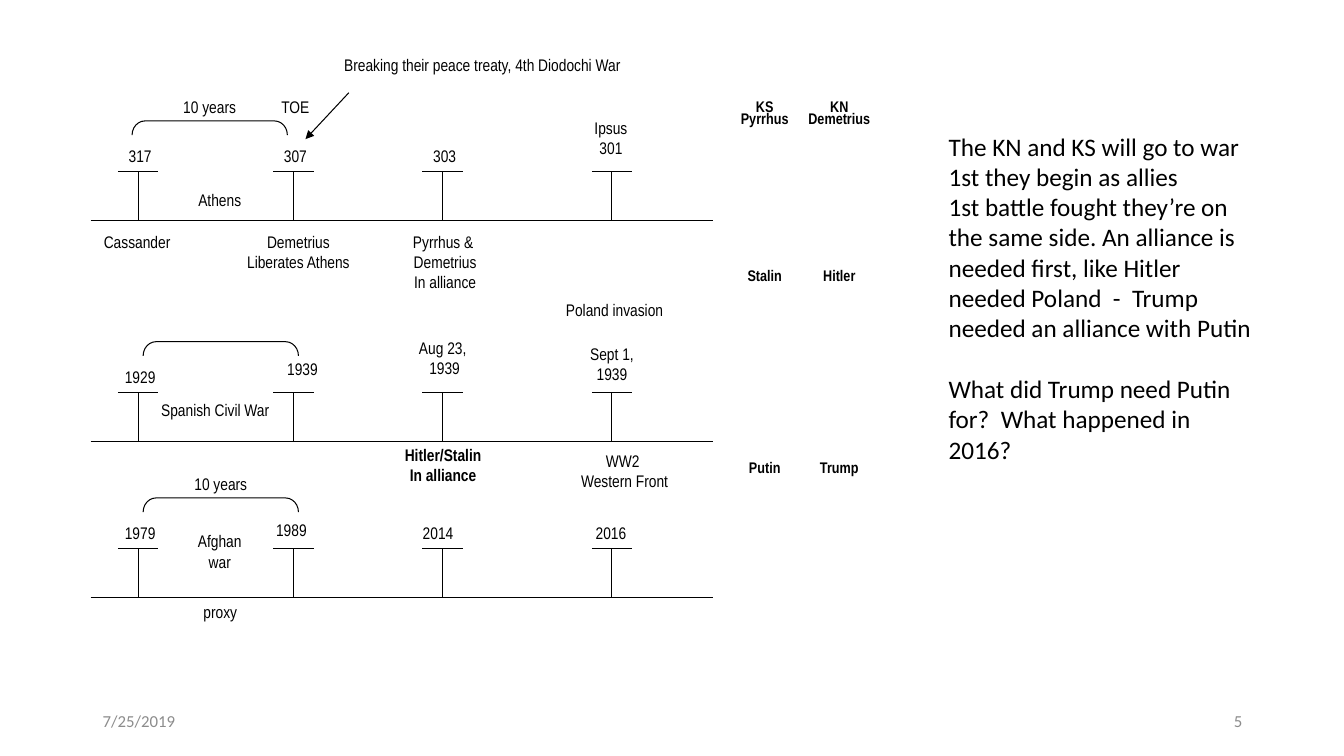
from lxml import etree
from pptx import Presentation
from pptx.dml.color import RGBColor
from pptx.enum import shapes, text
from pptx.oxml.ns import qn
from pptx.util import Inches, Pt

BLACK, GREY = "000000", "8C8C8C"
NARROW, PLAIN = "Arial Narrow", "Calibri"
LEFT, CENTER, RIGHT = text.PP_ALIGN.LEFT, text.PP_ALIGN.CENTER, text.PP_ALIGN.RIGHT

# Timelines: heights of the base lines, marks along each, (left, top) of brackets
BASES = [2.19, 4.38, 5.93]
LINE_START, LINE_END = 0.9, 7.07
MARKS = [1.37, 2.91, 4.39, 6.07]
STEM, HALF_TICK = 0.49, 0.2
BRACKETS = [(2.01, 0.5), (2.12, 2.69), (2.12, 4.24)]
ARROW = (3.46, 0.92, 3.03, 1.38)

# Labels: left, top, width, height, lines
LABELS = [
    (3.03, 0.5, 3.51, 0.32, ["Breaking their peace treaty, 4th Diodochi War"]),
    (1.71, 0.92, 0.74, 0.32, ["10 years"]),
    (2.71, 0.92, 0.44, 0.32, ["TOE"]),
    (1.17, 1.41, 0.44, 0.32, ["317"]),
    (2.71, 1.41, 0.44, 0.32, ["307"]),
    (4.19, 1.41, 0.44, 0.32, ["303"]),
    (5.66, 1.13, 0.8, 0.6, ["Ipsus", "301"]),
    (1.71, 1.84, 0.94, 0.32, ["Athens"]),
    (0.9, 2.26, 0.92, 0.32, ["Cassander"]),
    (2.32, 2.26, 1.28, 0.56, ["Demetrius", "Liberates Athens"]),
    (3.88, 2.26, 1.07, 0.78, ["Pyrrhus & ", "Demetrius", "In alliance"]),
    (5.57, 2.93, 1.05, 0.36, ["Poland invasion"]),
    (1.17, 3.6, 0.44, 0.32, ["1929"]),
    (2.68, 3.52, 0.64, 0.33, ["1939"]),
    (4.03, 3.31, 0.76, 0.61, ["Aug 23, ", "1939"]),
    (5.67, 3.37, 0.8, 0.55, ["Sept 1, 1939"]),
    (1.52, 3.93, 1.23, 0.38, ["Spanish Civil War"]),
    (5.67, 4.43, 1.05, 0.5, ["WW2 ", "Western Front"]),
    (1.82, 4.66, 0.74, 0.32, ["10 years"]),
    (1.17, 5.15, 0.44, 0.32, ["1979"]),
    (2.57, 5.12, 0.64, 0.29, ["1989"]),
    (4.06, 5.15, 0.57, 0.32, ["2014"]),
    (5.66, 5.15, 0.8, 0.32, ["2016"]),
    (1.71, 5.23, 0.94, 0.67, ["Afghan", "war"]),
    (1.65, 5.93, 1.07, 0.39, ["proxy"]),
]
ALLIANCE = (3.86, 4.37, 1.07, 0.5, ["Hitler/Stalin", "In alliance"])

KINGS = [
    (["KS", "Pyrrhus"], ["KN", "Demetrius"]),
    (["Stalin"], ["Hitler"]),
    (["Putin"], ["Trump"]),
]
KING_WIDTHS, KING_HEIGHTS = [0.67, 0.81], [1.68, 1.9, 1.18]

COMMENTARY = [
    "The KN and KS will go to war",
    "1st they begin as allies",
    "1st battle fought they’re on the same side. An alliance is needed first, "
    "like Hitler needed Poland  -  Trump needed an alliance with Putin",
    "What did Trump need Putin for?  What happened in 2016?",
]


def color(value):
    return RGBColor.from_string(value)


def write(frame, lines, size=12, font=NARROW, tint=BLACK, bold=False, align=CENTER):
    frame.text = "\n".join(lines)
    for para in frame.paragraphs:
        para.alignment = align
        for span in para.runs:
            span.font.size = Pt(size)
            span.font.name = font
            span.font.bold = bold
            span.font.color.rgb = color(tint)


def add_text(page, left, top, width, height, lines, inset=0.04, **style):
    box = page.shapes.add_textbox(*map(Inches, (left, top, width, height)))
    frame = box.text_frame
    frame.word_wrap = True
    frame.margin_left = frame.margin_right = Inches(inset)
    frame.margin_top = frame.margin_bottom = Inches(min(inset, 0.05))
    write(frame, lines, **style)
    return frame


def add_line(page, *ends):
    line = page.shapes.add_connector(shapes.MSO_CONNECTOR.STRAIGHT, *map(Inches, ends))
    line.line.color.rgb = color(BLACK)
    line.line.width = Pt(0.75)
    etree.SubElement(line._element.spPr, qn("a:effectLst"))
    return line


def add_timelines(page):
    for base in BASES:
        add_line(page, LINE_START, base, LINE_END, base)
        top = base - STEM
        for mark in MARKS:
            add_line(page, mark, top, mark, base)
            add_line(page, mark - HALF_TICK, top, mark + HALF_TICK, top)
    for left, top in BRACKETS:
        bracket = page.shapes.add_shape(shapes.MSO_SHAPE.LEFT_BRACKET,
                                        *map(Inches, (left, top, 0.14, 1.54)))
        bracket.rotation = 90
        bracket.adjustments[0] = 0.911
        bracket.shadow.inherit = False
        bracket.fill.background()
        bracket.line.color.rgb = color(BLACK)
        bracket.line.width = Pt(0.75)
    arrow = add_line(page, *ARROW)
    etree.SubElement(arrow.line._get_or_add_ln(), qn("a:tailEnd"), type="triangle")


def add_kings(page):
    table = page.shapes.add_table(
        len(KING_HEIGHTS), len(KING_WIDTHS), Inches(7.25), Inches(0.98),
        Inches(sum(KING_WIDTHS)), Inches(sum(KING_HEIGHTS))).table
    table.first_row = table.horz_banding = False
    for column, width in zip(table.columns, KING_WIDTHS):
        column.width = Inches(width)
    for row, height, kings in zip(table.rows, KING_HEIGHTS, KINGS):
        row.height = Inches(height)
        for cell, lines in zip(row.cells, kings):
            cell.fill.background()
            cell.margin_left = cell.margin_right = Inches(0.04)
            cell.margin_top = cell.margin_bottom = Inches(0.04)
            write(cell.text_frame, lines, size=11, bold=True)
            for para in cell.text_frame.paragraphs:
                para.line_spacing = 0.85


def main():
    deck = Presentation()
    deck.slide_width, deck.slide_height = Inches(13.33), Inches(7.5)
    page = deck.slides.add_slide(deck.slide_layouts[6])

    # Timelines and their labels
    add_timelines(page)
    for label in LABELS:
        add_text(page, *label)
    add_text(page, *ALLIANCE, bold=True)

    # Kings and commentary
    add_kings(page)
    frame = add_text(page, 9.31, 1.25, 3.23, 3.74, COMMENTARY, inset=0.1,
                     size=18, font=PLAIN, align=LEFT)
    frame.paragraphs[-1].space_before = Pt(22)

    # Date and page number
    for left, words, align in [(0.92, "7/25/2019", LEFT), (9.42, "5", RIGHT)]:
        footer = add_text(page, left, 6.95, 3, 0.4, [words], inset=0.1,
                          font=PLAIN, tint=GREY, align=align)
        footer.vertical_anchor = text.MSO_ANCHOR.MIDDLE

    deck.save("out.pptx")


if __name__ == "__main__":
    main()
